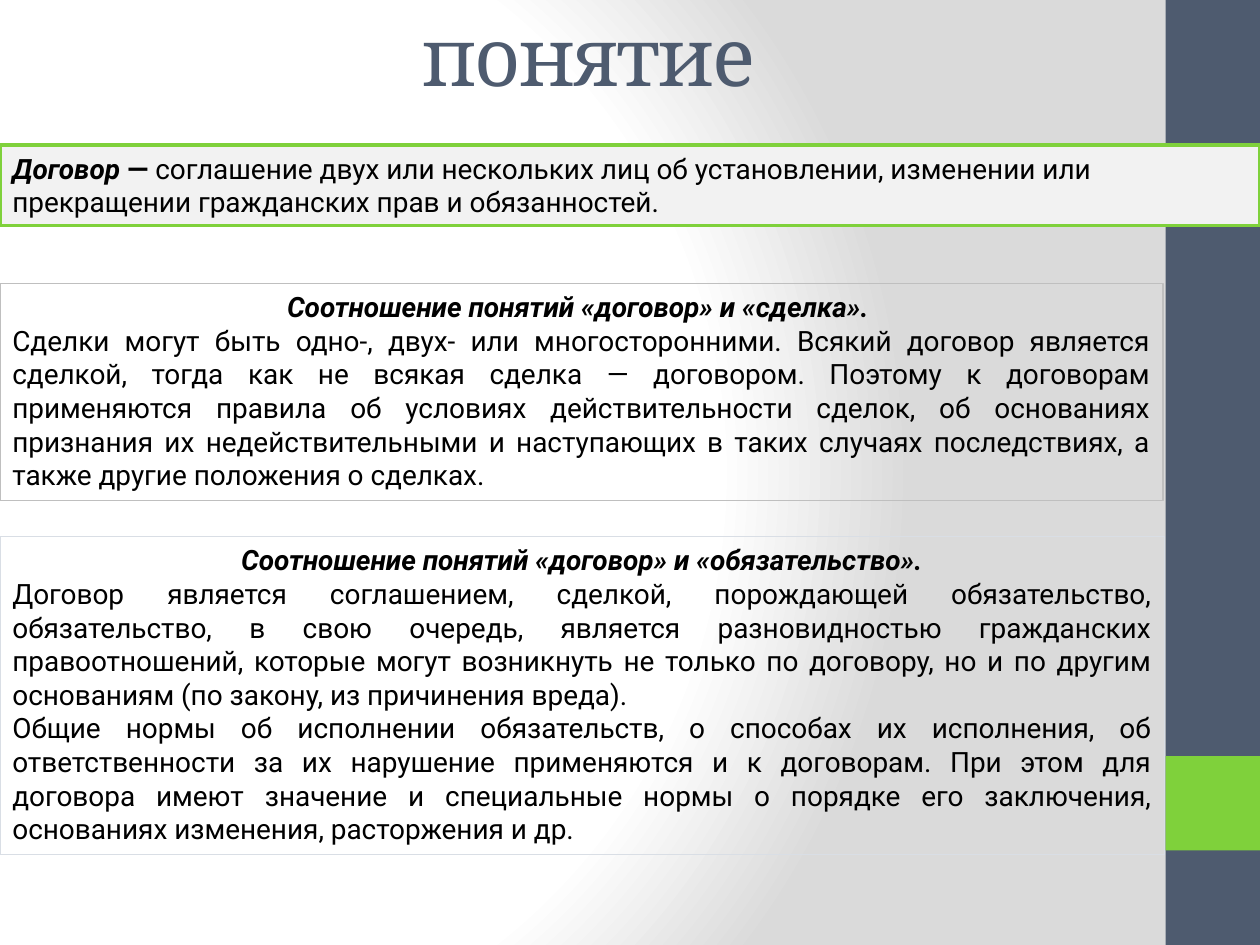
from pptx import Presentation
from pptx.dml.color import RGBColor
from pptx.enum.shapes import MSO_SHAPE
from pptx.enum.text import MSO_ANCHOR, MSO_AUTO_SIZE, PP_ALIGN
from pptx.oxml import parse_xml
from pptx.oxml.ns import nsdecls
from pptx.util import Inches, Pt

SLATE = RGBColor(0x4E, 0x5B, 0x6F)
GREEN = RGBColor(0x7F, 0xD1, 0x3B)
PALE = RGBColor(0xF2, 0xF2, 0xF2)
GRAY = RGBColor(0xBF, 0xBF, 0xBF)
MIST = RGBColor(0xD9, 0xDE, 0xE5)
BLACK = RGBColor(0, 0, 0)

BACKGROUND = f"""<p:bg {nsdecls('p', 'a')}><p:bgPr><a:gradFill rotWithShape="1"><a:gsLst>
<a:gs pos="0"><a:srgbClr val="FFFFFF"/></a:gs>
<a:gs pos="75000"><a:srgbClr val="FFFFFF"/></a:gs>
<a:gs pos="100000"><a:srgbClr val="DADADA"/></a:gs></a:gsLst>
<a:path path="circle"><a:fillToRect l="20000" t="50000" r="100000" b="50000"/></a:path>
</a:gradFill><a:effectLst/></p:bgPr></p:bg>"""

# Each paragraph: alignment, then runs of (text, bold, italic)
DEFINITION = [
    (PP_ALIGN.LEFT, [
        ("Договор", True, True),
        (" — ", True, False),
        ("соглашение двух или нескольких лиц об установлении, изменении или "
         "прекращении гражданских прав и обязанностей.", False, False)]),
]
DEAL = [
    (PP_ALIGN.CENTER, [("Соотношение понятий «договор» и «сделка». ", True, True)]),
    (PP_ALIGN.JUSTIFY, [
        ("Сделки могут быть одно-, двух- или многосторонними. Всякий договор является "
         "сделкой, тогда как не всякая сделка — договором. Поэтому к договорам "
         "применяются правила об условиях действительности сделок, об основаниях "
         "признания их недействительными и наступающих в таких случаях последствиях, "
         "а также другие положения о сделках.", False, False)]),
]
OBLIGATION = [
    (PP_ALIGN.CENTER, [("Соотношение понятий «договор» и «обязательство».", True, True)]),
    (PP_ALIGN.JUSTIFY, [
        ("Договор является соглашением, сделкой, порождающей обязательство, "
         "обязательство, в свою очередь, является разновидностью гражданских "
         "правоотношений, которые могут возникнуть не только по договору, но и по "
         "другим основаниям (по закону, из причинения вреда). ", False, False)]),
    (PP_ALIGN.JUSTIFY, [
        ("Общие нормы об исполнении обязательств, о способах их исполнения, об "
         "ответственности за их нарушение применяются и к договорам. При этом для "
         "договора имеют значение и специальные нормы о порядке его заключения, "
         "основаниях изменения, расторжения и др.", False, False)]),
]


def add_rect(left, top, width, height, fill=None, line=None, weight=0.75):
    sp = s.shapes.add_shape(MSO_SHAPE.RECTANGLE, Inches(left), Inches(top),
                            Inches(width), Inches(height))
    sp.shadow.inherit = False
    if fill is None:
        sp.fill.background()
    else:
        sp.fill.solid()
        sp.fill.fore_color.rgb = fill
    if line is None:
        sp.line.fill.background()
    else:
        sp.line.color.rgb = line
        sp.line.width = Pt(weight)
    return sp


prs = Presentation()
prs.slide_width, prs.slide_height = Inches(10), Inches(7.5)
s = prs.slides.add_slide(prs.slide_layouts[5])
s.element.cSld.insert(0, parse_xml(BACKGROUND))

# Side band with its accent square
add_rect(9.25, 0, 0.75, 7.5, SLATE)
add_rect(9.25, 6, 0.75, 0.75, GREEN)

title = s.shapes.title
title.left, title.top = Inches(0.51), Inches(-0.19)
title.width, title.height = Inches(8.33), Inches(1.25)
tf = title.text_frame
tf.text = "понятие"
tf.vertical_anchor = MSO_ANCHOR.MIDDLE
p = tf.paragraphs[0]
p.alignment = PP_ALIGN.CENTER
r = p.runs[0]
r.font.name, r.font.size = "Cambria", Pt(46)
r.font.color.rgb = SLATE
r.font._element.set("spc", "-100")

boxes = [
    (1.15, 10, 0.64, PALE, GREEN, 2, DEFINITION),
    (2.25, 9.23, 1.72, None, GRAY, 0.75, DEAL),
    (4.26, 9.24, 2.52, None, MIST, 0.75, OBLIGATION),
]
for top, width, height, fill, line, weight, paragraphs in boxes:
    tf = add_rect(0, top, width, height, fill, line, weight).text_frame
    tf.word_wrap = True
    tf.auto_size = MSO_AUTO_SIZE.SHAPE_TO_FIT_TEXT
    tf.vertical_anchor = MSO_ANCHOR.TOP
    for i, (alignment, runs) in enumerate(paragraphs):
        p = tf.add_paragraph() if i else tf.paragraphs[0]
        p.alignment = alignment
        for text, bold, italic in runs:
            r = p.add_run()
            r.text = text
            r.font.name, r.font.size = "Roboto", Pt(16)
            r.font.bold, r.font.italic = bold, italic
            r.font.color.rgb = BLACK

prs.save("out.pptx")
